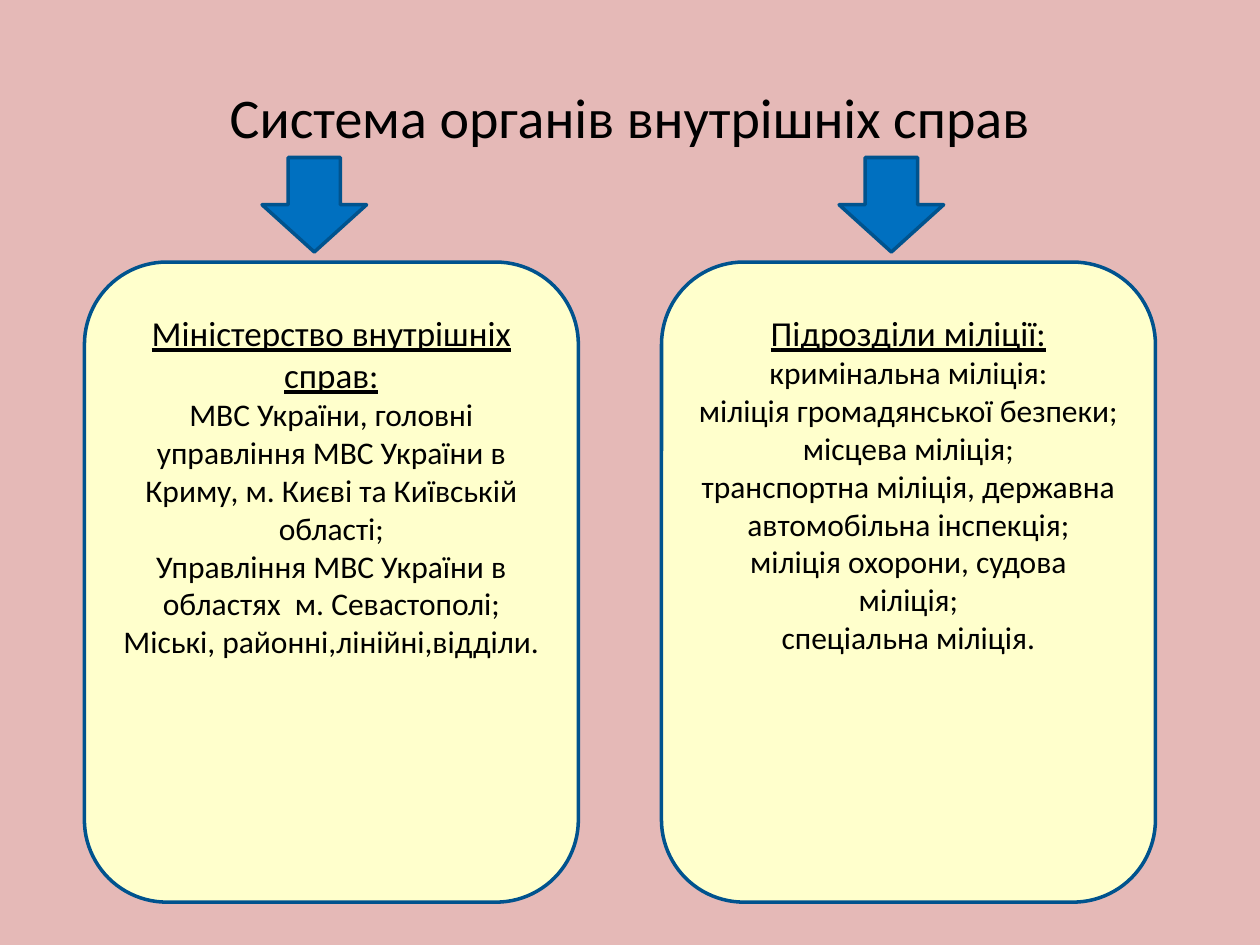
from pptx import Presentation
from pptx import util as u
from pptx.dml.color import RGBColor
from pptx.enum import shapes, text

TITLE = "Система органів внутрішніх справ"
BRANCHES = [
    ("Міністерство внутрішніх справ:", [
        "МВС України, головні управління МВС України в Криму, м. Києві та Київській області;",
        "Управління МВС України в областях  м. Севастополі;",
        "Міські, районні,лінійні,відділи.",
    ]),
    ("Підрозділи міліції:", [
        "кримінальна міліція:",
        "міліція громадянської безпеки;",
        "місцева міліція;",
        "транспортна міліція, державна автомобільна інспекція;",
        "міліція охорони, судова міліція;",
        "спеціальна міліція.",
    ]),
]
THEME = {
    "font": "Calibri", "title": 32, "heading": 20, "body": 18, "outline": 2,
    "background": "E5B9B7", "card": "FFFFCC", "arrow": "0070C0",
    "line": "00538E", "text": "000000",
}
CARD_LEFT, CARD_TOP, CARD_WIDTH, CARD_HEIGHT = 0.67, 2.08, 3.92, 5.08
CARD_STEP = 4.58
ARROW_OFFSET, ARROW_TOP, ARROW_WIDTH, ARROW_HEIGHT = 1.41, 1.25, 0.83, 0.75


def color(name):
    return RGBColor.from_string(THEME[name])


def format_paragraph(para, size, underline=False):
    para.alignment = text.PP_ALIGN.CENTER
    for span in para.runs:
        span.font.name = THEME["font"]
        span.font.size = u.Pt(THEME[size])
        span.font.color.rgb = color("text")
        span.font.underline = underline


def add_outlined(page, kind, fill, *place):
    shape = page.shapes.add_shape(kind, *map(u.Inches, place))
    shape.shadow.inherit = False
    shape.fill.solid()
    shape.fill.fore_color.rgb = color(fill)
    shape.line.color.rgb = color("line")
    shape.line.width = u.Pt(THEME["outline"])
    return shape


def add_title(page):
    box = page.shapes.title
    box.left, box.top, box.width, box.height = map(u.Inches, (0.5, 0.3, 9, 1.25))
    box.text_frame.text = TITLE
    box.text_frame.vertical_anchor = text.MSO_ANCHOR.MIDDLE
    format_paragraph(box.text_frame.paragraphs[0], "title")


def add_card(page, left, heading, lines):
    card = add_outlined(page, shapes.MSO_SHAPE.ROUNDED_RECTANGLE, "card",
                        left, CARD_TOP, CARD_WIDTH, CARD_HEIGHT)
    frame = card.text_frame
    frame.word_wrap = True
    frame.vertical_anchor = text.MSO_ANCHOR.TOP
    frame.margin_left = frame.margin_right = u.Inches(0.1)
    frame.margin_top = frame.margin_bottom = u.Inches(0.2)
    frame.text = "\n".join([heading, *lines])
    first, *rest = frame.paragraphs
    format_paragraph(first, "heading", underline=True)
    for para in rest:
        format_paragraph(para, "body")


def main():
    deck = Presentation()
    deck.slide_width, deck.slide_height = u.Inches(10), u.Inches(7.5)
    page = deck.slides.add_slide(deck.slide_layouts[5])
    page.background.fill.solid()
    page.background.fill.fore_color.rgb = color("background")
    add_title(page)
    lefts = [CARD_LEFT + index * CARD_STEP for index in range(len(BRANCHES))]
    for left, (heading, lines) in zip(lefts, BRANCHES):
        add_card(page, left, heading, lines)
    for left in lefts:
        add_outlined(page, shapes.MSO_SHAPE.DOWN_ARROW, "arrow",
                     left + ARROW_OFFSET, ARROW_TOP, ARROW_WIDTH, ARROW_HEIGHT)
    deck.save("out.pptx")


if __name__ == "__main__":
    main()
